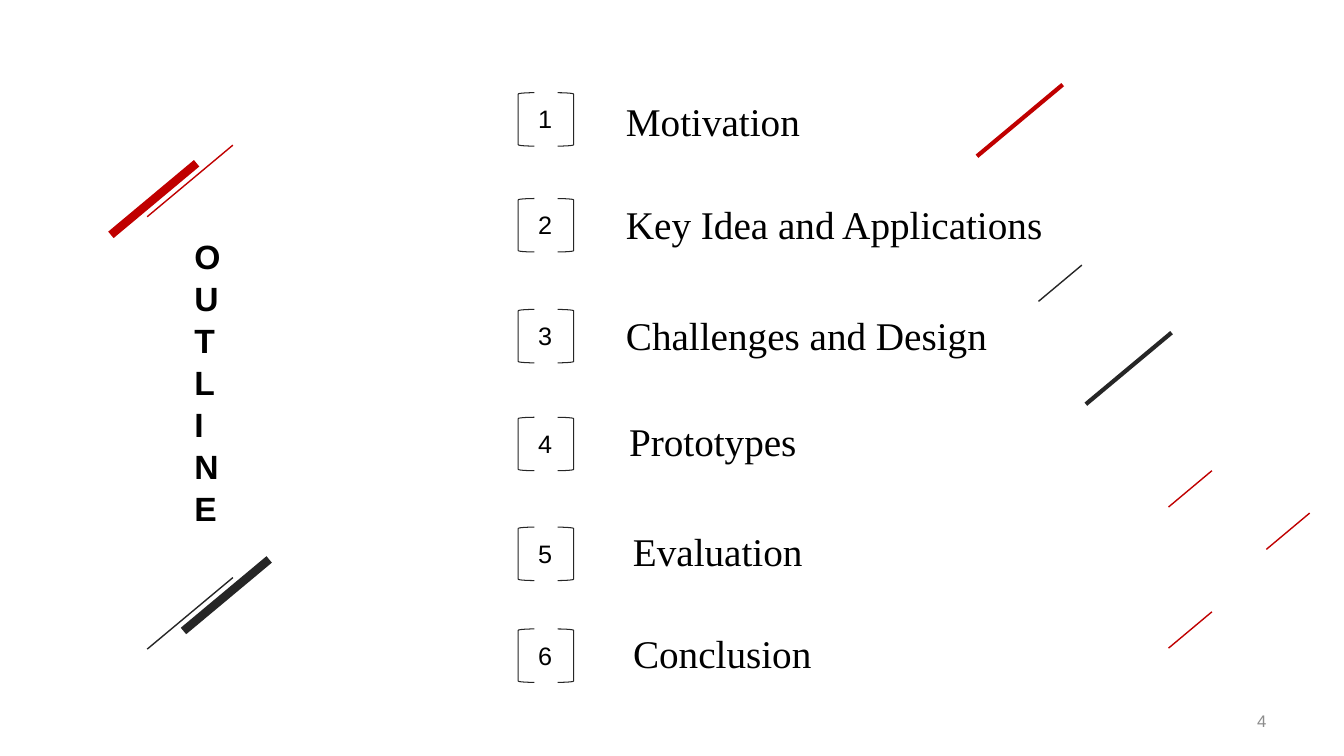
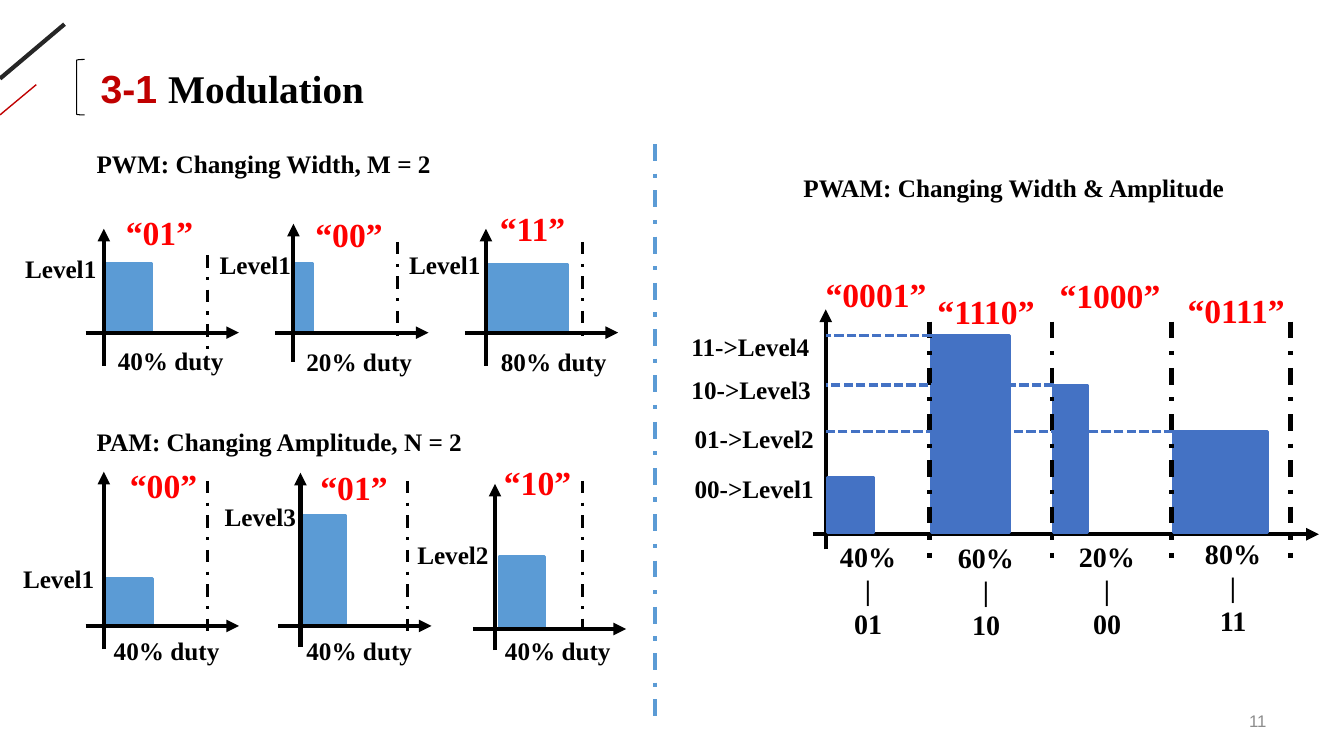
from collections import namedtuple
from dataclasses import dataclass

from lxml import etree
from pptx import Presentation
from pptx.dml.color import RGBColor
from pptx.enum.dml import MSO_LINE
from pptx.enum.shapes import MSO_CONNECTOR, MSO_SHAPE
from pptx.enum.text import MSO_ANCHOR, MSO_AUTO_SIZE, PP_ALIGN
from pptx.oxml.ns import qn
from pptx.util import Emu, Pt

LEFT, CENTER, RIGHT = PP_ALIGN.LEFT, PP_ALIGN.CENTER, PP_ALIGN.RIGHT
MIDDLE = MSO_ANCHOR.MIDDLE
GROW = MSO_AUTO_SIZE.SHAPE_TO_FIT_TEXT
RECT = MSO_SHAPE.RECTANGLE
OPEN, CLOSE = MSO_SHAPE.LEFT_BRACKET, MSO_SHAPE.RIGHT_BRACKET
STRAIGHT = MSO_CONNECTOR.STRAIGHT
DASHDOT, DASH = MSO_LINE.DASH_DOT, MSO_LINE.SQUARE_DOT
SCALE = 9144

Face = namedtuple("Face", "size font color bold align", defaults=(False, LEFT))
Row = namedtuple("Row", "text top left lift width")
Plot = namedtuple("Plot", "x y start low high bar level duty limit code")
Slot = namedtuple("Slot", "x end wide tall duty bits mid drop code shift rise")


@dataclass(frozen=True)
class Theme:
    black: str = "000000"
    dark: str = "262626"
    red: str = "C00000"
    sky: str = "5B9BD5"
    blue: str = "4472C4"
    thin: float = 0.75
    guide: float = 2.25
    axis: float = 3
    edge: float = 2
    sans: str = "Arial"
    serif: str = "Times New Roman"
    side: Face = Face(24, "Arial", "000000", True)
    index: Face = Face(18, "Arial", "000000")
    item: Face = Face(28, "Times New Roman", "000000")
    title: Face = Face(28, None, None, True)
    label: Face = Face(18, "Times New Roman", "000000", True)
    stack: Face = Face(20, "Times New Roman", "000000", True, CENTER)
    code: Face = Face(24, "Times New Roman", "FF0000", True)
    page: Face = Face(12, "Arial", "8C8C8C", False, RIGHT)


T = Theme()


@dataclass(frozen=True)
class Box:
    x: int
    y: int
    w: int
    h: int

    def sub(self, x, y, w, h):
        return Box(self.x + x, self.y + y, w, h)

    def emu(self):
        return [px(v) for v in (self.x, self.y, self.w, self.h)]


def px(n):
    return Emu(round(n * SCALE))


def rgb(color):
    return RGBColor.from_string(color)


def style(font, face):
    font.size, font.bold = Pt(face.size), face.bold
    if face.font:
        font.name = face.font
    if face.color:
        font.color.rgb = rgb(face.color)


def text(slide, box, lines, face, wrap=False, grow=True):
    frame = slide.shapes.add_textbox(*box.emu()).text_frame
    frame.word_wrap = wrap
    if grow:
        frame.auto_size = GROW
    for i, line in enumerate(lines):
        para = frame.add_paragraph() if i else frame.paragraphs[0]
        para.text = line
        para.alignment = face.align
        style(para.font, face)
    return frame


def line(slide, start, end, color, width, dash=None, arrow=False):
    link = slide.shapes.add_connector(
        STRAIGHT, *[px(v) for v in (*start, *end)])
    link.line.color.rgb = rgb(color)
    link.line.width = Pt(width)
    if dash:
        link.line.dash_style = dash
    if arrow:
        ln = link.line._get_or_add_ln()
        etree.SubElement(ln, qn("a:tailEnd"), type="triangle")
    etree.SubElement(link._element.spPr, qn("a:effectLst"))


def shape(slide, kind, box, color, width, fill=None):
    item = slide.shapes.add_shape(kind, *box.emu())
    item.shadow.inherit = False
    item.line.color.rgb = rgb(color)
    item.line.width = Pt(width)
    if fill:
        item.fill.solid()
        item.fill.fore_color.rgb = rgb(fill)
    else:
        item.fill.background()


def slash(slide, x, y, run, color, width):
    line(slide, (x + run, y - round(run * 0.84)), (x, y), color, width)


def axes(slide, x, y, start, end, low, high):
    for a, b in (((x + start, y), (x + end, y)), ((x, y + low), (x, y - high))):
        line(slide, a, b, T.black, T.axis, arrow=True)


def footer(slide, number):
    frame = text(slide, Box(955, 695, 311, 40), [number], T.page, True, False)
    frame.vertical_anchor = MIDDLE


def entry(slide, box, number, row):
    shape(slide, OPEN, box.sub(0, 0, 16, 53), T.dark, T.thin)
    shape(slide, CLOSE, box.sub(39, 0, 16, 53), T.dark, T.thin)
    text(slide, box.sub(10, 6, 34, 40), [str(number)], T.index)
    text(slide, box.sub(row.left, row.lift, row.width, 57), [row.text], T.item)


def outline(slide):
    for mark in (
        (110, 233, 85, T.red, 6), (146, 215, 85, T.red, 1),
        (182, 626, 85, T.dark, 6), (146, 644, 85, T.dark, 1),
        (969, 155, 85, T.red, 3), (1030, 299, 43, T.dark, 1),
        (1159, 503, 43, T.red, 1), (1077, 401, 85, T.dark, 3),
        (1256, 545, 43, T.red, 1), (1159, 643, 43, T.red, 1),
    ):
        slash(slide, *mark)
    side = text(slide, Box(183, 228, 37, 293), ["OUTLINE"], T.side, True)
    side.paragraphs[0].line_spacing = 1.04
    rows = (
        Row("Motivation", 92, 97, 0, 200),
        Row("Key Idea and Applications", 197, 97, -3, 435),
        Row("Challenges and Design", 307, 97, -3, 382),
        Row("Prototypes", 414, 100, -5, 188),
        Row("Evaluation", 523, 104, -5, 190),
        Row("Conclusion", 624, 104, -5, 199),
    )
    for i, row in enumerate(rows, 1):
        entry(slide, Box(514, row.top, 55, 53), i, row)
    footer(slide, "4")


def header(slide, box, number, name):
    slash(slide, 0, 78, 64, T.dark, 3)
    slash(slide, 0, 114, 36, T.red, 1)
    shape(slide, OPEN, box.sub(0, 0, 8, 55), T.black, T.thin)
    para = text(slide, box.sub(14, 0, 285, 57), [""], T.title).paragraphs[0]
    for part, font, color in ((number, T.sans, T.red), (name, T.serif, T.black)):
        run = para.add_run()
        run.text = part
        run.font.name = font
        run.font.color.rgb = rgb(color)


def pulse(slide, box, plot, span):
    dx, wide, tall = plot.bar
    shape(slide, RECT, box.sub(dx, -tall - 1, wide, tall), T.sky, T.edge, T.sky)
    axes(slide, box.x, box.y, plot.start, plot.start + 152, plot.low, plot.high)
    at, top = plot.limit
    line(slide, (box.x + at, box.y + top), (box.x + at, box.y + top + span),
         T.black, T.guide, DASHDOT)
    for (word, x, y), wide, tall, face in (
        (plot.level, 92, 40, T.label),
        (plot.duty, 126, 40, T.label),
        (plot.code, 104, 50, T.code),
    ):
        text(slide, box.sub(x, y, wide, tall), [word], face, face is T.code)


def series(slide, box, head, wide, span, plots):
    text(slide, box.sub(0, 0, wide, 40), [head], T.label)
    for plot in plots:
        pulse(slide, box.sub(plot.x, plot.y, 152, 136), plot, span)


def mixed(slide, box, slots, levels):
    text(slide, box.sub(111, 0, 448, 40),
         ["PWAM: Changing Width & Amplitude"], T.label)
    plot = box.sub(143, 364, 489, 223)
    x, y = plot.x, plot.y
    axes(slide, x, y, -13, 489, 15, 223)
    for slot in slots:
        cell = plot.sub(slot.x, 0, slot.end - slot.x, 0)
        shape(slide, RECT, cell.sub(2, -slot.tall - 2, slot.wide, slot.tall),
              T.blue, T.edge, T.blue)
        text(slide, cell.sub(slot.mid - 40, slot.drop, 80, 111),
             [slot.duty, "|", slot.bits], T.stack, True)
        text(slide, cell.sub(slot.shift, -slot.rise, 121 if slot.shift < 0
             and slot.rise > 250 else 117, 50), [slot.code], T.code)
    for slot in slots:
        line(slide, (x + slot.end, y - 211), (x + slot.end, y + 24),
             T.black, T.axis, DASHDOT)
    for slot in slots[1:]:
        top = y - slot.tall - 2
        line(slide, (x + slot.x + 2, top), (x, top), T.blue, T.guide, DASH)
    for word, dx, rise in levels:
        text(slide, plot.sub(dx, -rise, 150, 40), [word], T.label, True)


def modulation(slide):
    header(slide, Box(76, 59, 299, 57), "3-1 ", "Modulation")
    series(slide, Box(86, 142, 528, 236), "PWM: Changing Width, M = 2", 361, 102, (
        Plot(17, 188, -18, 33, 103, (3, 44, 68), ("Level1", -88, -84),
             ("40% duty", 4, 8), (103, -77), ("“01”", 12, -125)),
        Plot(205, 188, -18, 29, 108, (0, 19, 68), ("Level1", -83, -88),
             ("20% duty", 3, 9), (103, -90), ("“00”", 12, -123)),
        Plot(396, 188, -21, 33, 103, (0, 81, 67), ("Level1", -86, -88),
             ("80% duty", 5, 9), (96, -90), ("“11”", 4, -129)),
    ))
    series(slide, Box(86, 418, 535, 247), "PAM: Changing Amplitude, N = 2", 392, 158, (
        Plot(17, 203, -18, 23, 153, (3, 45, 46), ("Level1", -90, -67),
             ("40% duty", 0, 4), (103, -144), ("“00”", 16, -165)),
        Plot(212, 203, -22, 21, 152, (0, 45, 109), ("Level3", -85, -129),
             ("40% duty", -4, 4), (106, -144), ("“01”", 10, -163)),
        Plot(405, 206, -22, 21, 144, (4, 45, 71), ("Level2", -87, -94),
             ("40% duty", 0, 1), (87, -147), ("“10”", -1, -171)),
    ))
    line(slide, (650, 143), (650, 714), T.sky, T.axis, DASHDOT)
    mixed(slide, Box(676, 166, 632, 476), (
        Slot(0, 103, 46, 54, "40%", "01", 42, 0, "“0001”", -10, 263),
        Slot(103, 224, 77, 195, "60%", "10", 56, 1, "“1110”", -2, 246),
        Slot(224, 343, 34, 146, "20%", "00", 55, 0, "“1000”", -2, 262),
        Slot(343, 461, 93, 100, "80%", "11", 61, -3, "“0111”", 6, 247),
    ), (
        ("00->Level1", -140, 65), ("01->Level2", -140, 115),
        ("10->Level3", -143, 164), ("11->Level4", -143, 206),
    ))
    footer(slide, "11")


def main():
    deck = Presentation()
    deck.slide_width, deck.slide_height = px(1333), px(750)
    for build in (outline, modulation):
        build(deck.slides.add_slide(deck.slide_layouts[6]))
    deck.save("out.pptx")


if __name__ == "__main__":
    main()
